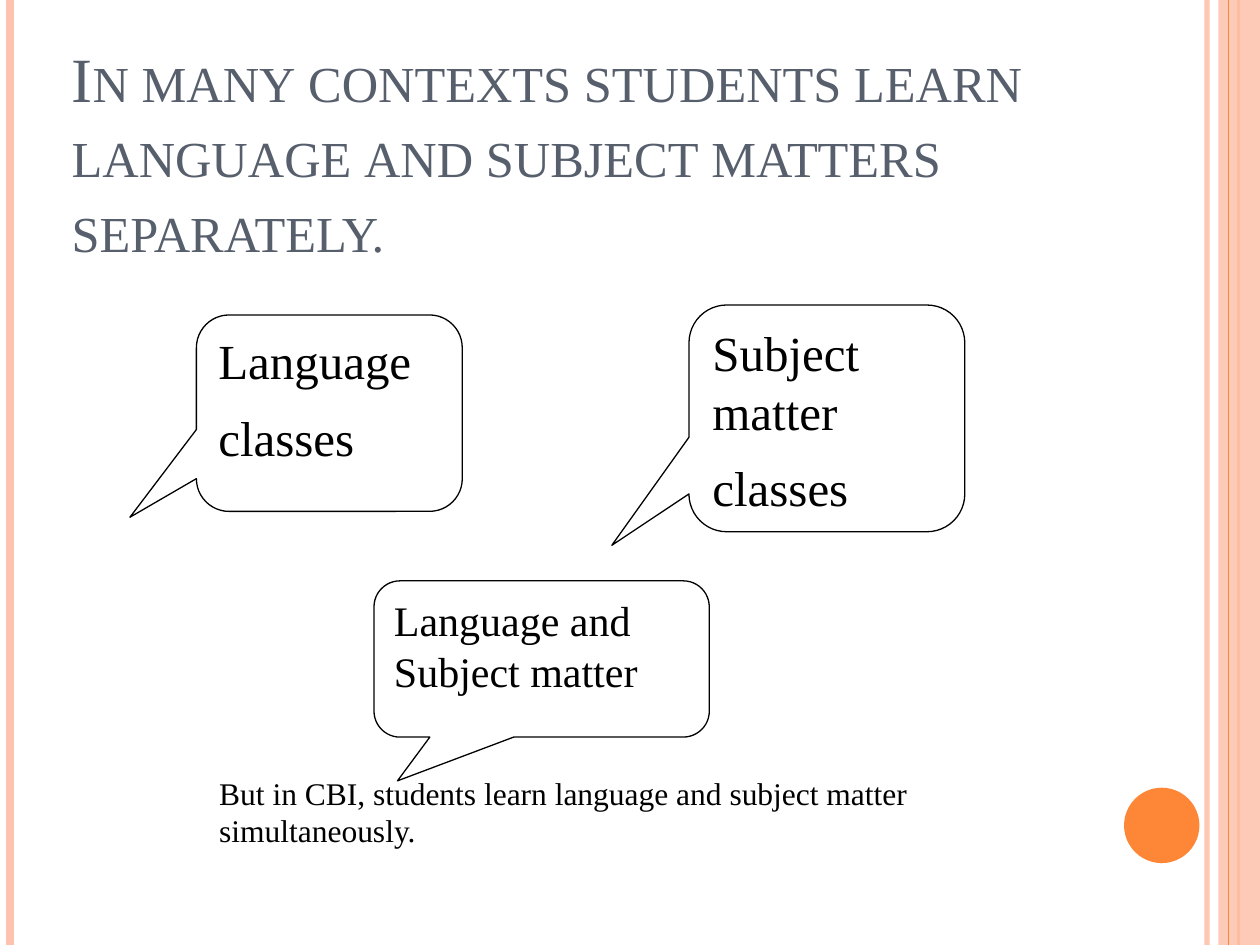
import pptx
import pptx.util
import pptx.dml.color
import pptx.enum.shapes
import pptx.enum.text
import pptx.oxml
import pptx.oxml.ns
from dataclasses import dataclass

Cm = pptx.util.Cm
Pt = pptx.util.Pt
qn = pptx.oxml.ns.qn
SHAPE = pptx.enum.shapes.MSO_SHAPE
ANCHOR = pptx.enum.text.MSO_ANCHOR
ALIGN = pptx.enum.text.PP_ALIGN


@dataclass(frozen=True)
class Theme:
    font: str = "Times New Roman"
    title: str = "575F6D"
    text: str = "000000"
    paper: str = "FFFFFF"
    pale: str = "FEC3AE"
    accent: str = "FE8637"
    title_size: int = 36
    large: int = 28
    medium: int = 24
    small: int = 18
    outline: float = 0.75


THEME = Theme()


def rgb(value):
    return pptx.dml.color.RGBColor.from_string(value)


def set_attrs(obj, values):
    for name, value in values.items():
        setattr(obj, name, value)


def set_alpha(element, percent):
    for color in element.iter(qn("a:srgbClr")):
        alpha = color.makeelement(qn("a:alpha"), {"val": str(percent * 1000)})
        color.append(alpha)


def write_text(tf, lines, size, color, frame=None, paragraph=None):
    set_attrs(tf, {"word_wrap": True, "vertical_anchor": ANCHOR.TOP, **(frame or {})})
    for i, line in enumerate(lines):
        p = tf.paragraphs[0] if i == 0 else tf.add_paragraph()
        set_attrs(p, {"alignment": ALIGN.LEFT, **(paragraph or {})})
        r = p.add_run()
        r.text = line
        set_attrs(r.font, {"name": THEME.font, "size": Pt(size)})
        r.font.color.rgb = rgb(color)


def add_filled(s, kind, box, color):
    sp = s.shapes.add_shape(kind, *map(Cm, box))
    sp.shadow.inherit = False
    sp.fill.solid()
    sp.fill.fore_color.rgb = rgb(color)
    sp.line.fill.background()
    return sp


def add_rule(s, x, top, height, color, width, alpha=100):
    line = s.shapes.add_connector(
        pptx.enum.shapes.MSO_CONNECTOR.STRAIGHT, Cm(x), Cm(top), Cm(x), Cm(top + height))
    line.line.color.rgb = rgb(color)
    line.line.width = Pt(width)
    sp_pr = line._element.spPr
    sp_pr.append(sp_pr.makeelement(qn("a:effectLst"), {}))
    if alpha < 100:
        set_alpha(sp_pr, alpha)


def add_decoration(s, box):
    left, top, width, height = box
    right = left + width
    add_rule(s, right - 1.07, top, height, THEME.pale, 3, 93)
    add_rule(s, left + 0.2, top, height, THEME.pale, 4.5)
    add_rule(s, right - 0.43, top, height, THEME.accent, 1.5)
    band = add_filled(s, SHAPE.RECTANGLE, (right - 0.84, top, 0.84, height), THEME.pale)
    set_alpha(band._element.spPr, 87)
    add_rule(s, right - 0.63, top, height, THEME.accent, 0.75)
    add_filled(s, SHAPE.OVAL, (right - 2.74, top + 15.88, 1.52, 1.52), THEME.accent)


def add_title(s, box, text):
    sp = s.shapes.title
    set_attrs(sp, dict(zip(("left", "top", "width", "height"), map(Cm, box))))
    frame = {"vertical_anchor": ANCHOR.BOTTOM, "margin_bottom": Cm(1.63),
             "auto_size": pptx.enum.text.MSO_AUTO_SIZE.NONE}
    write_text(sp.text_frame, [text], THEME.title_size, THEME.title,
               frame, {"line_spacing": Pt(43)})
    sp.text_frame.paragraphs[0].runs[0].font._element.set("cap", "small")


def add_callout(s, box, tail, lines, size, space_after=0):
    sp = add_filled(s, SHAPE.ROUNDED_RECTANGULAR_CALLOUT, box, THEME.paper)
    sp.line.color.rgb = rgb(THEME.text)
    sp.line.width = Pt(THEME.outline)
    for i, value in enumerate(tail):
        sp.adjustments[i] = value
    write_text(sp.text_frame, lines, size, THEME.text,
               paragraph={"space_after": Pt(space_after)})


def add_caption(s, box, text):
    sp = s.shapes.add_textbox(*map(Cm, box))
    write_text(sp.text_frame, [text], THEME.small, THEME.text)


def main():
    prs = pptx.Presentation()
    set_attrs(prs, {"slide_width": Cm(25.4), "slide_height": Cm(19.05)})
    s = prs.slides.add_slide(prs.slide_layouts.get_by_name("Title Only"))
    s.background.fill.solid()
    s.background.fill.fore_color.rgb = rgb(THEME.paper)

    add_decoration(s, (0, 0, 25.4, 19.05))
    add_title(s, (1.19, 2.59, 22.86, 4.39),
              "In many contexts students learn language and subject matters separately.")
    add_callout(s, (3.96, 6.35, 5.36, 3.96), (-0.75, 0.53),
                ["Language", "classes"], THEME.large, 10)
    add_callout(s, (13.89, 6.15, 5.56, 4.57), (-0.78, 0.56),
                ["Subject matter", "classes"], THEME.large, 10)
    add_callout(s, (7.54, 11.71, 6.76, 3.15), (-0.43, 0.78),
                ["Language and Subject matter"], THEME.medium)
    add_caption(s, (4.17, 15.47, 15.88, 1.8),
                "But in CBI, students learn language and subject matter simultaneously.")
    prs.save("out.pptx")


if __name__ == "__main__":
    main()
